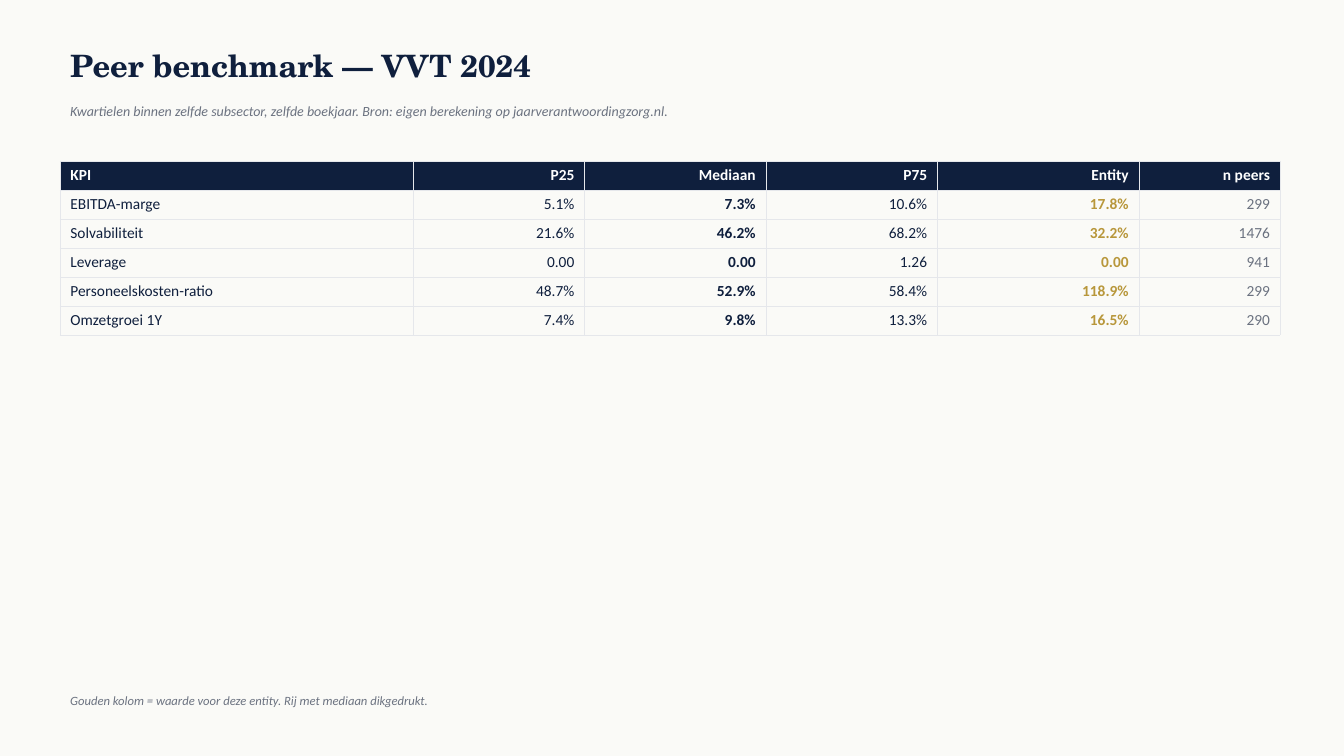
"""Build the VVT 2024 peer benchmark slide with its quartile table."""
from dataclasses import dataclass

import lxml.etree
import pptx
import pptx.dml.color
import pptx.enum.text
import pptx.oxml.ns
import pptx.presentation
import pptx.slide
import pptx.table
import pptx.text.text
import pptx.util


@dataclass(frozen=True)
class Theme:
    paper: str = "FAFAF7"
    navy: str = "0F1F3D"
    grey: str = "6B7280"
    gold: str = "B8973B"
    white: str = "FFFFFF"
    rule: str = "E5E7EB"
    heading_font: str = "TeX Gyre Schola"
    body_font: str = "Calibri"
    title_size: float = 22
    subtitle_size: float = 10
    table_size: float = 11
    footnote_size: float = 9
    rule_width: float = 0.5


THEME = Theme()
LEFT = 1.52


@dataclass(frozen=True)
class TextStyle:
    size: float
    color: str
    font: str = THEME.body_font
    bold: bool = False
    italic: bool = False


@dataclass(frozen=True)
class Caption:
    text: str
    top: float
    height: float
    style: TextStyle


@dataclass(frozen=True)
class Column:
    heading: str
    width: float
    color: str = THEME.navy
    bold: bool = False
    numeric: bool = True


CAPTIONS = (
    Caption("Peer benchmark — VVT 2024", 1.02, 1.27,
            TextStyle(THEME.title_size, THEME.navy, THEME.heading_font, bold=True)),
    Caption("Kwartielen binnen zelfde subsector, zelfde boekjaar. "
            "Bron: eigen berekening op jaarverantwoordingzorg.nl.", 2.41, 0.76,
            TextStyle(THEME.subtitle_size, THEME.grey, italic=True)),
    Caption("Gouden kolom = waarde voor deze entity. Rij met mediaan dikgedrukt.", 17.27, 0.76,
            TextStyle(THEME.footnote_size, THEME.grey, italic=True)),
)
COLUMNS = (
    Column("KPI", 8.89, numeric=False),
    Column("P25", 4.32),
    Column("Mediaan", 4.57, bold=True),
    Column("P75", 4.32),
    Column("Entity", 5.08, THEME.gold, bold=True),
    Column("n peers", 3.56, THEME.grey),
)
BENCHMARKS = (
    ("EBITDA-marge", "5.1%", "7.3%", "10.6%", "17.8%", "299"),
    ("Solvabiliteit", "21.6%", "46.2%", "68.2%", "32.2%", "1476"),
    ("Leverage", "0.00", "0.00", "1.26", "0.00", "941"),
    ("Personeelskosten-ratio", "48.7%", "52.9%", "58.4%", "118.9%", "299"),
    ("Omzetgroei 1Y", "7.4%", "9.8%", "13.3%", "16.5%", "290"),
)
TABLE_TOP = 4.06
ROW_HEIGHT = 0.73


def rgb(value: str) -> pptx.dml.color.RGBColor:
    return pptx.dml.color.RGBColor.from_string(value)


def write(paragraph: pptx.text.text._Paragraph, text: str, style: TextStyle) -> None:
    paragraph.text = text
    font = paragraph.font
    font.name, font.size = style.font, pptx.util.Pt(style.size)
    font.bold, font.italic = style.bold, style.italic
    font.color.rgb = rgb(style.color)


def add_caption(slide: pptx.slide.Slide, caption: Caption) -> None:
    frame = slide.shapes.add_textbox(
        pptx.util.Cm(LEFT), pptx.util.Cm(caption.top),
        pptx.util.Cm(30.48), pptx.util.Cm(caption.height)).text_frame
    frame.word_wrap = True
    frame.vertical_anchor = pptx.enum.text.MSO_ANCHOR.MIDDLE
    write(frame.paragraphs[0], caption.text, caption.style)


def add_borders(cell: pptx.table._Cell) -> None:
    qn = pptx.oxml.ns.qn
    properties = cell._tc.get_or_add_tcPr()
    for side in ("a:lnL", "a:lnR", "a:lnT", "a:lnB"):
        border = lxml.etree.SubElement(
            properties, qn(side), w=str(int(pptx.util.Pt(THEME.rule_width))))
        fill = lxml.etree.SubElement(border, qn("a:solidFill"))
        lxml.etree.SubElement(fill, qn("a:srgbClr"), val=THEME.rule)


def fill_cell(cell: pptx.table._Cell, text: str, column: Column, header: bool) -> None:
    add_borders(cell)
    if header:
        cell.fill.solid()
        cell.fill.fore_color.rgb = rgb(THEME.navy)
    else:
        cell.fill.background()
    paragraph = cell.text_frame.paragraphs[0]
    if column.numeric:
        paragraph.alignment = pptx.enum.text.PP_ALIGN.RIGHT
    color = THEME.white if header else column.color
    write(paragraph, text, TextStyle(THEME.table_size, color, bold=header or column.bold))


def add_benchmark_table(slide: pptx.slide.Slide) -> None:
    rows = (tuple(column.heading for column in COLUMNS), *BENCHMARKS)
    table = slide.shapes.add_table(
        len(rows), len(COLUMNS), pptx.util.Cm(LEFT), pptx.util.Cm(TABLE_TOP),
        pptx.util.Cm(sum(column.width for column in COLUMNS)),
        pptx.util.Cm(ROW_HEIGHT * len(rows))).table
    table.first_row = table.horz_banding = False
    for index, column in enumerate(COLUMNS):
        table.columns[index].width = pptx.util.Cm(column.width)
    for row_index, values in enumerate(rows):
        table.rows[row_index].height = pptx.util.Cm(ROW_HEIGHT)
        for column_index, (text, column) in enumerate(zip(values, COLUMNS)):
            fill_cell(table.cell(row_index, column_index), text, column, row_index == 0)


def build() -> pptx.presentation.Presentation:
    presentation = pptx.Presentation()
    presentation.slide_width = pptx.util.Cm(33.87)
    presentation.slide_height = pptx.util.Cm(19.05)
    slide = presentation.slides.add_slide(presentation.slide_layouts[6])
    slide.background.fill.solid()
    slide.background.fill.fore_color.rgb = rgb(THEME.paper)
    for caption in CAPTIONS:
        add_caption(slide, caption)
    add_benchmark_table(slide)
    return presentation


if __name__ == "__main__":
    build().save("out.pptx")
